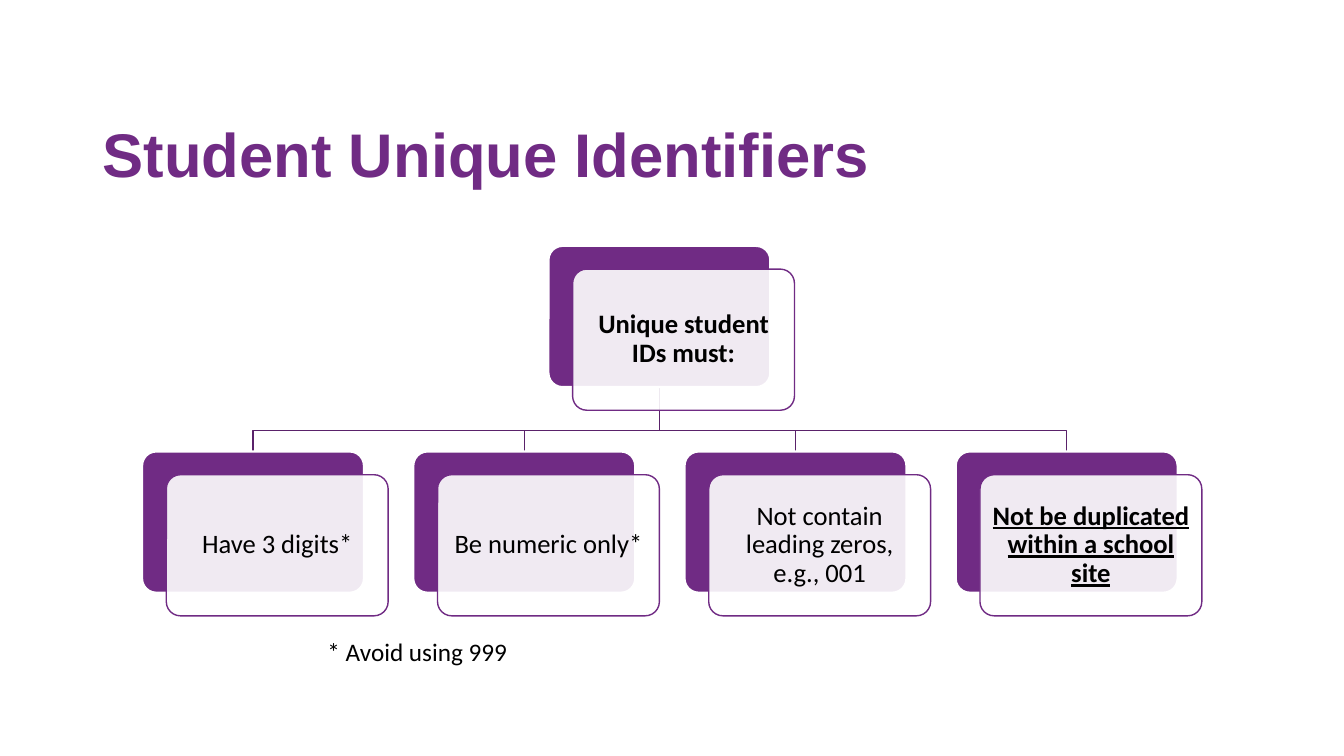
from lxml import etree
from pptx import Presentation
from pptx.dml.color import RGBColor
from pptx.enum.shapes import MSO_SHAPE
from pptx.enum.text import MSO_ANCHOR, MSO_AUTO_SIZE, PP_ALIGN
from pptx.oxml.ns import qn
from pptx.util import Inches, Pt

ROUNDED = MSO_SHAPE.ROUNDED_RECTANGLE
MIDDLE = MSO_ANCHOR.MIDDLE
LEFT, CENTER = PP_ALIGN.LEFT, PP_ALIGN.CENTER
NO_FIT, GROW = MSO_AUTO_SIZE.NONE, MSO_AUTO_SIZE.SHAPE_TO_FIT_TEXT

PURPLE = RGBColor(0x70, 0x2B, 0x84)
DARK_PURPLE = RGBColor(0x5A, 0x22, 0x6A)
WHITE = RGBColor(0xFF, 0xFF, 0xFF)
BLACK = RGBColor(0, 0, 0)

CARD_WIDTH, CARD_HEIGHT = 2.2, 1.4
OFFSET_X, OFFSET_Y = 0.24, 0.23
ROOT_LEFT, ROOT_TOP = 5.44, 2.44
RULES_LEFT, RULES_TOP, RULE_STEP = 1.41, 4.48, 2.69
BRANCH_Y = 4.27

RULES = [
    ("Have 3 digits*", False),
    ("Be numeric only*", False),
    ("Not contain leading zeros, e.g., 001", False),
    ("Not be duplicated within a school site", True),
]


def style_font(font, name, size, color, bold=False, underline=False):
    font.name = name
    font.size = Pt(size)
    font.color.rgb = color
    font.bold = bold
    font.underline = underline


def add_title(slide, text):
    title = slide.shapes.title
    title.left, title.top = Inches(0.92), Inches(0.84)
    title.width, title.height = Inches(11.5), Inches(1.45)
    frame = title.text_frame
    frame.text = text
    frame.auto_size = NO_FIT
    frame.vertical_anchor = MIDDLE
    para = frame.paragraphs[0]
    para.alignment = LEFT
    para.line_spacing = 0.9
    style_font(para.runs[0].font, "Arial", 44, PURPLE, bold=True)


def add_branch(slide, start_x, end_x):
    """Draw an elbow line from under the root card to the top of a rule card."""
    start_y = ROOT_TOP + CARD_HEIGHT
    builder = slide.shapes.build_freeform(Inches(start_x), Inches(start_y))
    corners = [(start_x, BRANCH_Y), (end_x, BRANCH_Y), (end_x, RULES_TOP)]
    builder.add_line_segments([(Inches(x), Inches(y)) for x, y in corners], close=False)
    branch = builder.convert_to_shape()
    branch.shadow.inherit = False
    branch.fill.background()
    branch.line.color.rgb = DARK_PURPLE
    branch.line.width = Pt(1)


def add_panel(slide, left, top, fill, line, line_width):
    panel = slide.shapes.add_shape(
        ROUNDED, Inches(left), Inches(top), Inches(CARD_WIDTH), Inches(CARD_HEIGHT))
    panel.adjustments[0] = 0.1
    panel.shadow.inherit = False
    panel.fill.solid()
    panel.fill.fore_color.rgb = fill
    panel.line.color.rgb = line
    panel.line.width = Pt(line_width)
    return panel


def set_opacity(shape, percent):
    color = shape.fill._xPr.find(qn("a:solidFill"))[0]
    etree.SubElement(color, qn("a:alpha")).set("val", str(percent * 1000))


def add_card(slide, left, top, text, bold=False, underline=False):
    """Add a purple panel with a translucent, captioned panel over it."""
    add_panel(slide, left, top, PURPLE, WHITE, 1.5)
    front = add_panel(slide, left + OFFSET_X, top + OFFSET_Y, WHITE, PURPLE, 1)
    set_opacity(front, 90)
    frame = front.text_frame
    frame.text = text
    frame.word_wrap = True
    frame.vertical_anchor = MIDDLE
    frame.margin_left = frame.margin_right = Inches(0.07)
    frame.margin_top = frame.margin_bottom = Inches(0.07)
    para = frame.paragraphs[0]
    para.alignment = CENTER
    para.line_spacing = 0.9
    style_font(para.runs[0].font, "Calibri", 19, BLACK, bold, underline)


def add_footnote(slide, text):
    box = slide.shapes.add_textbox(Inches(3.15), Inches(6.26), Inches(2), Inches(0.4))
    frame = box.text_frame
    frame.text = text
    frame.word_wrap = False
    frame.auto_size = GROW
    style_font(frame.paragraphs[0].runs[0].font, "Calibri", 18, BLACK)


def main():
    deck = Presentation()
    deck.slide_width, deck.slide_height = Inches(13.33), Inches(7.5)
    slide = deck.slides.add_slide(deck.slide_layouts[5])
    add_title(slide, "Student Unique Identifiers")

    rule_lefts = [RULES_LEFT + RULE_STEP * index for index in range(len(RULES))]
    half_card = CARD_WIDTH / 2
    for left in reversed(rule_lefts):
        add_branch(slide, ROOT_LEFT + half_card, left + half_card)

    add_card(slide, ROOT_LEFT, ROOT_TOP, "Unique student IDs must:", bold=True)
    for left, (text, emphasized) in zip(rule_lefts, RULES):
        add_card(slide, left, RULES_TOP, text, bold=emphasized, underline=emphasized)

    add_footnote(slide, "* Avoid using 999")
    deck.save("out.pptx")


if __name__ == "__main__":
    main()
